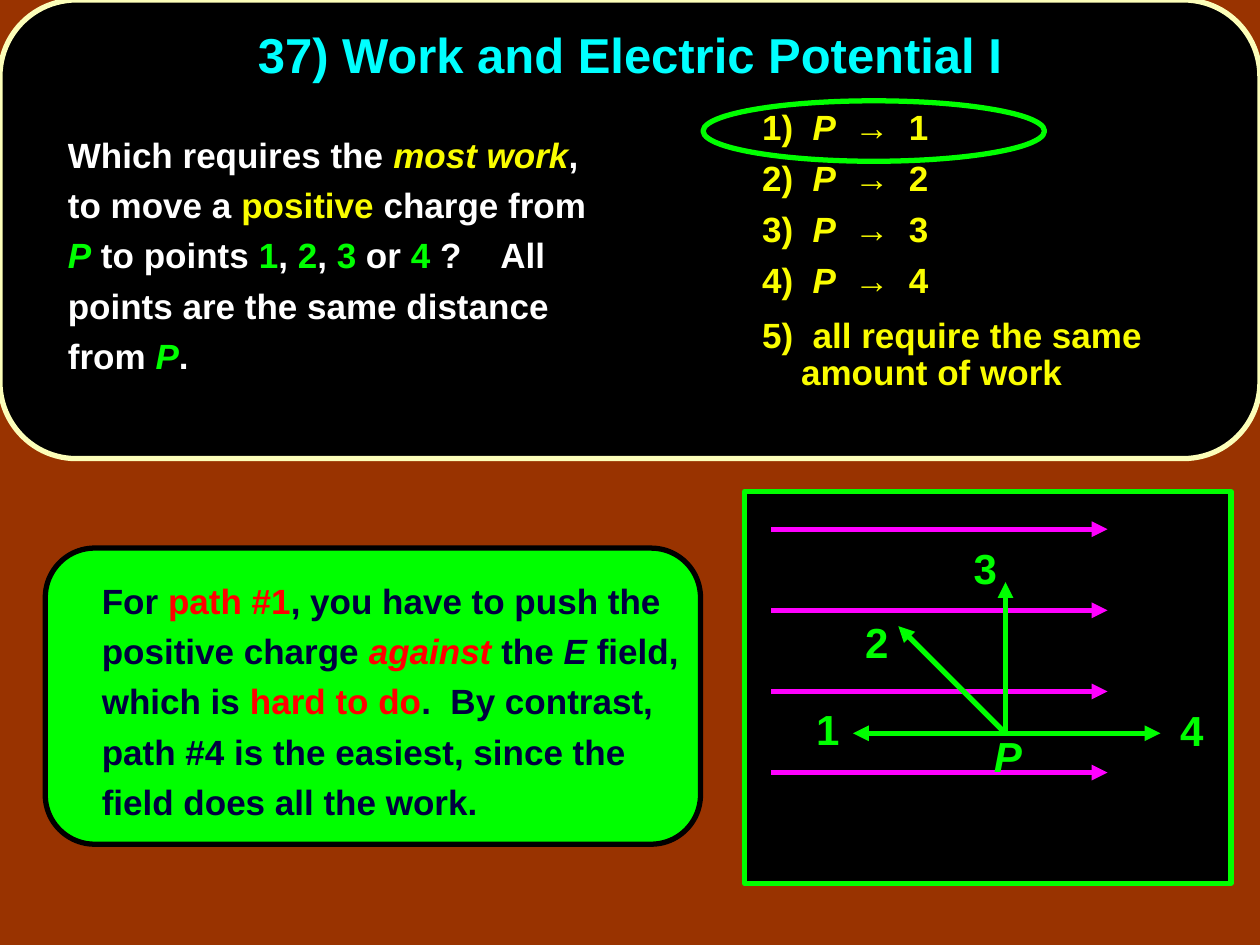
from pptx import Presentation
from pptx.dml.color import RGBColor as RGB
from pptx.enum.shapes import MSO_CONNECTOR as LINE, MSO_SHAPE as SHAPE
from pptx.enum.text import MSO_ANCHOR as ANCHOR, PP_ALIGN as ALIGN
from pptx.oxml.ns import qn
from pptx.util import Inches, Pt
from lxml.etree import SubElement as Sub

RUST = RGB(0x99, 0x33, 0x00)
BLACK = RGB(0, 0, 0)
WHITE = RGB(0xFF, 0xFF, 0xFF)
CREAM = RGB(0xFC, 0xFE, 0xB9)
GREEN = RGB(0, 0xFF, 0)
YELLOW = RGB(0xFA, 0xFD, 0)
CYAN = RGB(0, 0xFF, 0xFF)
PINK = RGB(0xFF, 0, 0xFF)
RED = RGB(0xFF, 0, 0)
NAVY = RGB(0, 0, 0x40)

deck = Presentation()
deck.slide_width, deck.slide_height = Inches(10), Inches(7.5)
U = deck.slide_width / 100  # square grid: 100 columns by 75 rows
slide = deck.slides.add_slide(deck.slide_layouts[6])
slide.background.fill.solid()
slide.background.fill.fore_color.rgb = RUST


def grid(*cells):
    return [round(c * U) for c in cells]


def write(text, box, color=WHITE, size=20, align=ALIGN.LEFT, anchor=ANCHOR.TOP,
          wrap=True, lead=(0.9,), left=0, hang=0):
    """Each paragraph is a list of runs: (text, color, italic, tracking)."""
    frame = slide.shapes.add_textbox(*grid(*box)).text_frame
    frame.word_wrap, frame.vertical_anchor = wrap, anchor
    for i, runs in enumerate(text):
        par = frame.paragraphs[0] if i == 0 else frame.add_paragraph()
        par.alignment, par.line_spacing = align, lead[i % len(lead)]
        par.space_before = Pt(10 if i else 0)
        margin, indent = grid(left, -hang)
        props = par._p.get_or_add_pPr()
        props.set("marL", str(margin))
        props.set("indent", str(indent))
        for part in runs:
            words, tint, slant, track = (*part, None, False, 0)[:4] if len(part) == 1 else (
                *part, *(False, 0)[len(part) - 2:])
            run = par.add_run()
            run.text = words
            font = run.font
            font.name, font.size, font.bold, font.italic = "Arial", Pt(size), True, slant
            font.color.rgb = tint or color
            if track:
                run._r.get_or_add_rPr().set("spc", str(track))


# Panels, answer ring and diagram frame
for kind, box, fill, edge in (
    (SHAPE.ROUNDED_RECTANGLE, (3.6, 43.5, 52, 23.5), GREEN, BLACK),
    (SHAPE.ROUNDED_RECTANGLE, (0, 0, 100, 36.4), BLACK, CREAM),
    (SHAPE.OVAL, (55.8, 8, 27.1, 4.8), None, GREEN),
    (SHAPE.RECTANGLE, (59.1, 39, 38.6, 31.1), BLACK, GREEN),
):
    panel = slide.shapes.add_shape(kind, *grid(*box))
    panel.shadow.inherit = False
    panel.line.color.rgb, panel.line.width = edge, Pt(3)
    if fill is None:
        panel.fill.background()
    else:
        panel.fill.solid()
        panel.fill.fore_color.rgb = fill

# Field lines, then the four paths out of P
field = [(61.2, 42 + 6.44 * i, 87.9, 42 + 6.44 * i, PINK) for i in range(4)]
paths = [(79.8, 58.2, x, y, GREEN)
         for x, y in ((67.7, 58.2), (71.3, 49.7), (79.8, 46.2), (92.1, 58.2))]
for *ends, color in field + paths:
    arrow = slide.shapes.add_connector(LINE.STRAIGHT, *grid(*ends))
    arrow.line.color.rgb, arrow.line.width = color, Pt(3)
    Sub(arrow.line._get_or_add_ln(), qn("a:tailEnd"), type="triangle")
    Sub(arrow._element.spPr, qn("a:effectLst"))

# Point labels
for name, x, y in (("P", 77.9, 57.9), ("1", 63.7, 55.8), ("2", 67.6, 48.9),
                   ("3", 76.2, 43), ("4", 92.6, 55.9)):
    write([[(name, GREEN, name == "P")]], (x, y, 4, 4.6), size=24,
          align=ALIGN.CENTER, anchor=ANCHOR.MIDDLE, wrap=False)

# Title
write([[("37) Work and Electric Potential I",)]], (0, 0, 100, 9.2), color=CYAN,
      size=28, align=ALIGN.CENTER, anchor=ANCHOR.MIDDLE)

# Question
write([[("Which requires the ",), ("most work", YELLOW, True), (", to move a ",),
        ("positive", YELLOW), (" charge from ",), ("P", GREEN, True),
        (" to points ",), ("1", GREEN), (", ",), ("2", GREEN), (", ",),
        ("3", GREEN), (" or ",), ("4", GREEN), (" ?",), (" ", WHITE, False, 1670),
        ("All points are the same distance from ",), ("P", GREEN, True), (".",)]],
      (0, 9.4, 49.5, 24.7), lead=(1.2,), left=4.4)

# Choices
moves = [[(f"{n})  ",), ("P  ", YELLOW, True), (f"→  {n}",)] for n in range(1, 5)]
write(moves + [[("5)  all require the same amount of work",)]],
      (59.5, 8.5, 40.5, 24.4), color=YELLOW, lead=(0.8,) * 4 + (0.9,),
      left=3.1, hang=3.1)

# Explanation
write([[("For ",), ("path #1", RED), (", you have to push the positive charge ",),
        ("against", RED, True), (" the ",), ("E", NAVY, True), (" field, which is ",),
        ("hard to do", RED),
        (".  By contrast, path #4 is the easiest, since the field does all the work.",)]],
      (4, 44.8, 52.3, 21), color=NAVY, lead=(1.2,), left=3.1)

deck.save("out.pptx")
